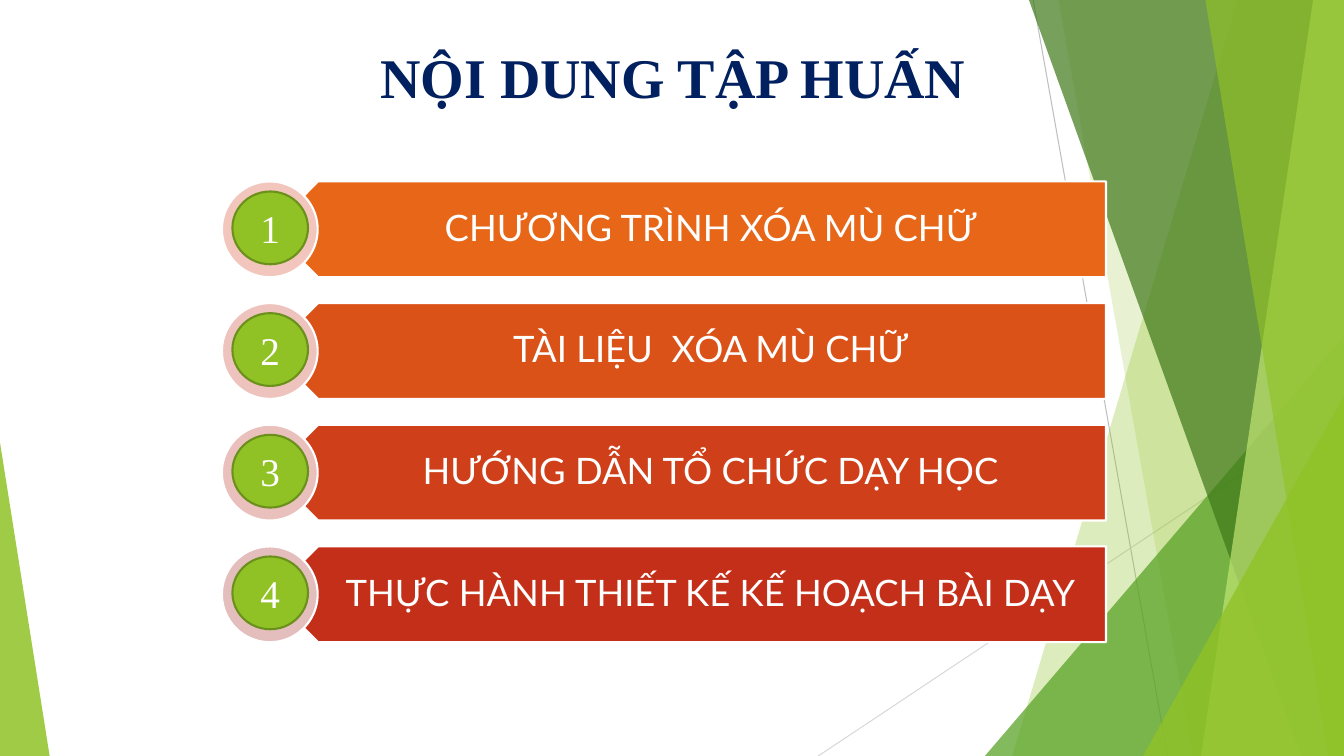
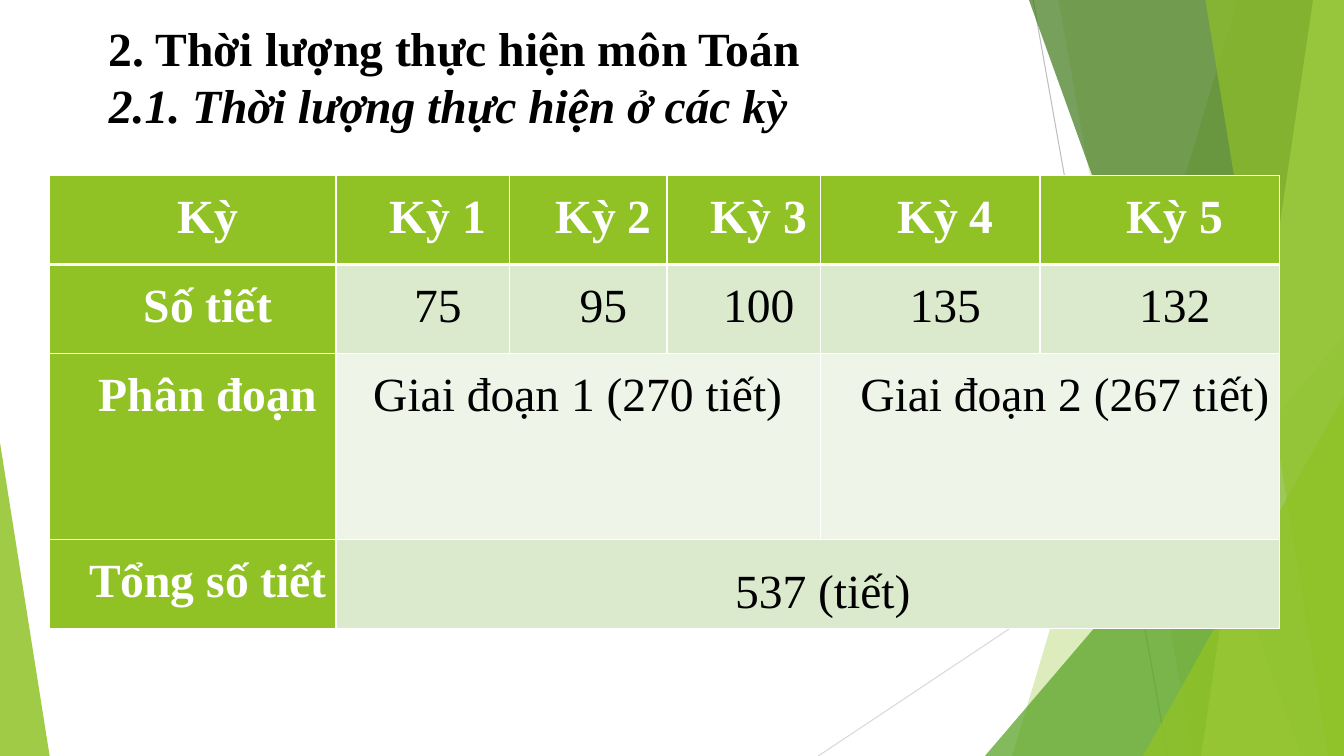
"""Build a two-slide training deck: an agenda and a lesson-time table."""
from lxml.etree import SubElement
from pptx import Presentation
from pptx.dml.color import RGBColor
from pptx.enum.shapes import MSO_CONNECTOR, MSO_SHAPE
from pptx.enum.text import MSO_ANCHOR, MSO_AUTO_SIZE, PP_ALIGN
from pptx.oxml.ns import qn
from pptx.util import Pt

WHITE = RGBColor(0xFF, 0xFF, 0xFF)
BLACK = RGBColor(0x00, 0x00, 0x00)
NAVY = RGBColor(0x00, 0x20, 0x60)
LIME = RGBColor(0x90, 0xC2, 0x26)
OLIVE = RGBColor(0x6B, 0x90, 0x1C)
LEAF = RGBColor(0x54, 0xA0, 0x21)
FOREST = RGBColor(0x3F, 0x78, 0x19)
PALE_LIME = RGBColor(0xC0, 0xE4, 0x74)
GREY = RGBColor(0xBF, 0xBF, 0xBF)
LIGHT_GREY = RGBColor(0xD9, 0xD9, 0xD9)
BAND_DARK = RGBColor(0xDB, 0xE9, 0xCD)
BAND_LIGHT = RGBColor(0xEE, 0xF4, 0xE8)
SERIF, SANS = "Times New Roman", "Lato"
WIDTH, HEIGHT = 960, 540
INDENT = 21.6

RAYS = [((738, 0), (834, HEIGHT), GREY), ((WIDTH, 290), (584.5, HEIGHT), LIGHT_GREY)]
FACETS = [
    ("band", (884, 723), LIME, 30),
    ("band", (756, 852), LIME, 20),
    ("triangle", (703.5, 240, 256.5, 1), LEAF, 72),
    ("band", (735, 929.5), FOREST, 70),
    ("band", (938, 858), PALE_LIME, 70),
    ("band", (861, 949), LIME, 65),
    ("triangle", (816.5, 283, 143.5, 1), LIME, 80),
    ("triangle", (0, 316, 35.5, 0), LIME, 85),
]

AGENDA_TITLE = "NỘI DUNG TẬP HUẤN"
AGENDA = [
    ("CHƯƠNG TRÌNH XÓA MÙ CHỮ", RGBColor(0xE7, 0x66, 0x18), RGBColor(0xF3, 0xC6, 0xBD)),
    ("TÀI LIỆU  XÓA MÙ CHỮ", RGBColor(0xDB, 0x52, 0x19), RGBColor(0xEF, 0xC3, 0xBD)),
    ("HƯỚNG DẪN TỔ CHỨC DẠY HỌC", RGBColor(0xCF, 0x3F, 0x1A), RGBColor(0xEA, 0xC0, 0xBD)),
    ("THỰC HÀNH THIẾT KẾ KẾ HOẠCH BÀI DẠY", RGBColor(0xC4, 0x2F, 0x1A), RGBColor(0xE4, 0xBE, 0xBD)),
]
AGENDA_TOP, AGENDA_PITCH, BAR_HEIGHT = 129.6, 86.9, 68.4

TIME_TITLE = [
    ("2. Thời lượng thực hiện môn Toán", False),
    ("2.1. Thời lượng thực hiện ở các kỳ", True),
]
TIME_ROWS = [
    ["Kỳ", "Kỳ 1", "Kỳ 2", "Kỳ 3", "Kỳ 4", "Kỳ 5"],
    ["Số tiết", "75", "95", "100", "135", "132"],
    ["Phân đoạn", "Giai đoạn 1 (270 tiết)", None, None, "Giai đoạn 2 (267 tiết)", None],
    ["Tổng số tiết", "537 (tiết)", None, None, None, None],
]
ROW_FILLS = [LIME, BAND_DARK, BAND_LIGHT, BAND_DARK]
COLUMN_WIDTHS = [204.5, 124, 112.5, 109.5, 157, 171]
ROW_HEIGHTS = [63.5, 63.5, 133, 63.5]


def add_run(paragraph, text, size, color, font=SERIF, bold=False, italic=False):
    run = paragraph.add_run()
    run.text = text
    run.font.name, run.font.size = font, Pt(size)
    run.font.bold, run.font.italic = bold, italic
    run.font.color.rgb = color


def indent_first_line(paragraph):
    properties = paragraph._p.get_or_add_pPr()
    properties.set("marL", "0")
    properties.set("indent", str(Pt(INDENT)))


def paint(shape, fill, line=None, opacity=100):
    shape.shadow.inherit = False
    shape.fill.solid()
    shape.fill.fore_color.rgb = fill
    if opacity < 100:
        tint = shape.element.spPr.find(".//" + qn("a:srgbClr"))
        SubElement(tint, qn("a:alpha")).set("val", str(opacity * 1000))
    if line is None:
        shape.line.fill.background()
    else:
        shape.line.color.rgb, shape.line.width = line, Pt(1.5)


def add_preset(slide, kind, left, top, width, height, fill, line=None, opacity=100):
    shape = slide.shapes.add_shape(kind, Pt(left), Pt(top), Pt(width), Pt(height))
    paint(shape, fill, line, opacity)
    return shape


def draw_backdrop(slide):
    for start, end, color in RAYS:
        ray = slide.shapes.add_connector(MSO_CONNECTOR.STRAIGHT, *map(Pt, start + end))
        ray.line.color.rgb, ray.line.width = color, Pt(0.75)
        SubElement(ray.element.spPr, qn("a:effectLst"))
        yield ray
    for kind, geometry, color, opacity in FACETS:
        if kind == "band":
            top_x, bottom_x = geometry
            outline = slide.shapes.build_freeform(Pt(top_x), 0)
            corners = [(WIDTH, 0), (WIDTH, HEIGHT), (bottom_x, HEIGHT)]
            outline.add_line_segments([(Pt(x), Pt(y)) for x, y in corners])
            facet = outline.convert_to_shape()
            paint(facet, color, opacity=opacity)
        else:
            left, top, width, apex = geometry
            facet = add_preset(slide, MSO_SHAPE.ISOSCELES_TRIANGLE, left, top, width,
                               HEIGHT - top, color, opacity=opacity)
            facet.adjustments[0] = apex
        yield facet


def share_backdrop(slide, layout):
    for holder in list(layout.placeholders)[1:]:
        holder.element.getparent().remove(holder.element)
    for position, part in enumerate(list(draw_backdrop(slide)), start=2):
        layout.shapes.element.insert(position, part.element)


def place_title(slide, left, top, width, height, anchor):
    title = slide.shapes.title
    title.left, title.top, title.width, title.height = map(Pt, (left, top, width, height))
    frame = title.text_frame
    frame.word_wrap, frame.auto_size = True, MSO_AUTO_SIZE.NONE
    frame.vertical_anchor = anchor
    return frame


def fill_agenda(slide):
    heading = place_title(slide, 25, 26.6, 911.5, 57, MSO_ANCHOR.TOP).paragraphs[0]
    heading.alignment = PP_ALIGN.CENTER
    add_run(heading, AGENDA_TITLE, 40, NAVY, bold=True)
    for index, (topic, bar_color, ring_color) in enumerate(AGENDA):
        top = AGENDA_TOP + index * AGENDA_PITCH
        bar = add_preset(slide, MSO_SHAPE.PENTAGON, 193, top, 597, BAR_HEIGHT, bar_color, WHITE)
        bar.rotation = 180
        label = slide.shapes.add_textbox(Pt(210), Pt(top), Pt(580), Pt(BAR_HEIGHT)).text_frame
        label.word_wrap, label.vertical_anchor = True, MSO_ANCHOR.MIDDLE
        label.margin_left, label.margin_right = Pt(30), Pt(14.4)
        line = label.paragraphs[0]
        line.alignment, line.line_spacing = PP_ALIGN.CENTER, 0.9
        add_run(line, topic, 26, WHITE, SANS)
        add_preset(slide, MSO_SHAPE.OVAL, 158.5, top, BAR_HEIGHT, BAR_HEIGHT, ring_color, WHITE)
        badge = add_preset(slide, MSO_SHAPE.OVAL, 166, top + 7.2, 54, 52, LIME, OLIVE)
        badge.text_frame.vertical_anchor = MSO_ANCHOR.MIDDLE
        number = badge.text_frame.paragraphs[0]
        number.alignment = PP_ALIGN.CENTER
        add_run(number, str(index + 1), 28, WHITE)


def add_borders(cell, row):
    properties = cell._tc.get_or_add_tcPr()
    widths = {"L": 1, "R": 1, "T": 3 if row == 1 else 1, "B": 3 if row == 0 else 1}
    for side, width in widths.items():
        border = SubElement(properties, qn("a:ln" + side), w=str(Pt(width)))
        SubElement(SubElement(border, qn("a:solidFill")), qn("a:srgbClr"), val=str(WHITE))


def fill_cell(cell, text, row, column):
    is_heading = row == 0 or column == 0
    add_borders(cell, row)
    cell.fill.solid()
    cell.fill.fore_color.rgb = LIME if is_heading else ROW_FILLS[row]
    if text is None:
        return
    cell.margin_left = cell.margin_right = Pt(5)
    cell.margin_top = cell.margin_bottom = 0
    is_total = row == len(TIME_ROWS) - 1 and column > 0
    cell.vertical_anchor = MSO_ANCHOR.MIDDLE if is_total else MSO_ANCHOR.TOP
    line = cell.text_frame.paragraphs[0]
    line.alignment = PP_ALIGN.LEFT if (row, column) == (2, 1) else PP_ALIGN.CENTER
    line.line_spacing = 1.3
    line.space_before = line.space_after = Pt(3)
    indent_first_line(line)
    add_run(line, text, 34, WHITE if is_heading else BLACK, bold=is_heading)


def fill_lesson_time(slide):
    heading = place_title(slide, 49, 9.4, 880, 90, MSO_ANCHOR.MIDDLE)
    for index, (text, italic) in enumerate(TIME_TITLE):
        line = heading.add_paragraph() if index else heading.paragraphs[0]
        line.alignment = PP_ALIGN.JUSTIFY
        indent_first_line(line)
        add_run(line, text, 34, BLACK, bold=True, italic=italic)
    table = slide.shapes.add_table(
        len(ROW_HEIGHTS), len(COLUMN_WIDTHS), Pt(35.5), Pt(125.5),
        Pt(sum(COLUMN_WIDTHS)), Pt(sum(ROW_HEIGHTS))).table
    table.first_row = table.horz_banding = False
    for column, width in zip(table.columns, COLUMN_WIDTHS):
        column.width = Pt(width)
    for row, (texts, height) in enumerate(zip(TIME_ROWS, ROW_HEIGHTS)):
        table.rows[row].height = Pt(height)
        for column, text in enumerate(texts):
            fill_cell(table.cell(row, column), text, row, column)
        starts = [column for column, text in enumerate(texts) if text is not None]
        for start, end in zip(starts, starts[1:] + [len(texts)]):
            if end - start > 1:
                table.cell(row, start).merge(table.cell(row, end - 1))


def main():
    deck = Presentation()
    deck.slide_width, deck.slide_height = Pt(WIDTH), Pt(HEIGHT)
    layout = deck.slide_layouts[5]
    agenda = deck.slides.add_slide(layout)
    share_backdrop(agenda, layout)
    fill_agenda(agenda)
    fill_lesson_time(deck.slides.add_slide(layout))
    deck.save("out.pptx")


if __name__ == "__main__":
    main()
